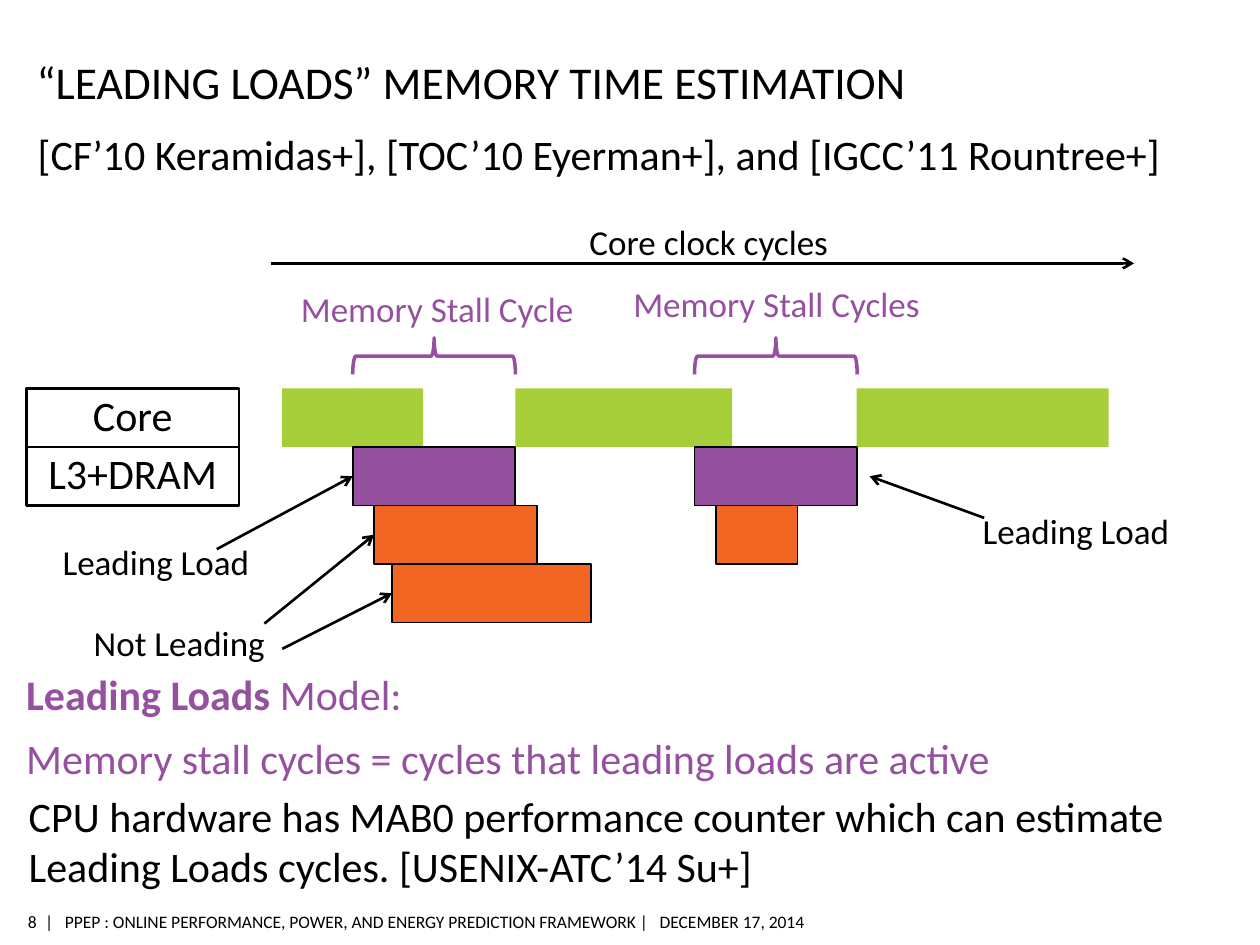
from lxml import etree
from pptx import Presentation
from pptx.dml.color import RGBColor
from pptx.enum.shapes import MSO_CONNECTOR, MSO_SHAPE
from pptx.enum.text import MSO_ANCHOR as ANCHOR, PP_ALIGN as ALIGN
from pptx.oxml.ns import qn
from pptx.util import Cm, Pt

COLORS = {"black": "000000", "white": "FFFFFF", "green": "A6CE39",
          "orange": "F26522", "purple": "9650A0"}
ROW_TOP, ROW_HEIGHT = 7.83, 1.18
STALL_WIDTH = 3.28
BRACE_WIDTH, BRACE_TOP = 0.74, 5.54


def write(box, paragraphs, size, color="black", align=ALIGN.LEFT,
          anchor=ANCHOR.TOP, side=0, top=0.13, bottom=0.13, spacing=1.0, wrap=True):
    frame = box.text_frame
    settings = {"word_wrap": wrap, "vertical_anchor": anchor,
                "margin_left": Cm(side), "margin_right": Cm(side),
                "margin_top": Cm(top), "margin_bottom": Cm(bottom)}
    for name, value in settings.items():
        setattr(frame, name, value)
    for index, spans in enumerate(paragraphs):
        para = frame.paragraphs[0] if index == 0 else frame.add_paragraph()
        properties = para._p.get_or_add_pPr()
        properties.set("marL", "0")
        properties.set("indent", "0")
        etree.SubElement(properties, qn("a:buNone"))
        formats = {"alignment": align, "line_spacing": spacing,
                   "space_before": Pt(8 if index else 0)}
        for name, value in formats.items():
            setattr(para, name, value)
        for text, bold in spans:
            span = para.add_run()
            span.text = text
            for name, value in {"name": "Calibri", "size": Pt(size), "bold": bold}.items():
                setattr(span.font, name, value)
            span.font.color.rgb = RGBColor.from_string(COLORS[color])


def add_block(left, row, width, fill, line_width):
    block = page.shapes.add_shape(MSO_SHAPE.RECTANGLE, Cm(left),
                                  Cm(ROW_TOP + row * ROW_HEIGHT), Cm(width), Cm(ROW_HEIGHT))
    block.shadow.inherit = False
    block.fill.solid()
    block.fill.fore_color.rgb = RGBColor.from_string(COLORS[fill])
    if line_width:
        block.line.color.rgb = RGBColor.from_string(COLORS["black"])
        block.line.width = Pt(line_width)
    else:
        block.line.fill.background()
    return block


deck = Presentation()
deck.slide_width, deck.slide_height = Cm(25.4), Cm(19.05)
page = deck.slides.add_slide(deck.slide_layouts[1])

title, citations = page.shapes.title, page.placeholders[1]
for box, place in ((title, (0.74, 0.86, 21.34, 1.32)), (citations, (0.76, 2.46, 23.88, 1.57))):
    box.left, box.top, box.width, box.height = map(Cm, place)
write(title, [[("“LEADING LOADS” MEMORY TIME ESTIMATION", False)]], 26,
      anchor=ANCHOR.BOTTOM, bottom=0)
write(citations, [[("[CF’10 Keramidas+], [TOC’10 Eyerman+], and [IGCC’11 Rountree+]", False)]], 24)

for row, text in enumerate(("Core", "L3+DRAM")):
    block = add_block(0.53, row, 4.29, "white", 1.5)
    write(block, [[(text, False)]], 24, align=ALIGN.CENTER, anchor=ANCHOR.MIDDLE,
          side=0.25, spacing=0.9)

for left, width in ((5.69, 1.45), (7.11, 1.42), (10.39, 4.37), (17.27, 5.08)):
    add_block(left, 0, width, "green", 0)
other_loads = [add_block(left, row, width, "orange", 1) for left, row, width in
               ((7.54, 2, STALL_WIDTH), (7.9, 3, 4.01), (14.43, 2, 1.65))]

leading_loads = []
for left in (7.11, 14):
    leading_loads.append(add_block(left, 1, STALL_WIDTH, "purple", 1))
    brace = page.shapes.add_shape(MSO_SHAPE.LEFT_BRACE,
                                  Cm(left + (STALL_WIDTH - BRACE_WIDTH) / 2),
                                  Cm(BRACE_TOP), Cm(BRACE_WIDTH), Cm(STALL_WIDTH))
    brace.rotation = 90
    brace.shadow.inherit = False
    brace.fill.background()
    brace.line.color.rgb = RGBColor.from_string(COLORS["purple"])
    brace.line.width = Pt(2)

arrows = [
    (4.37, 11.07, 7.11, 9.6, leading_loads[0]),
    (5.33, 12.57, 7.54, 10.8, other_loads[0]),
    (5.69, 13.08, 7.9, 11.99, other_loads[1]),
    (19.84, 10.44, 17.53, 9.6, None),
    (5.46, 5.31, 22.86, 5.31, None),
]
for *ends, target in arrows:
    arrow = page.shapes.add_connector(MSO_CONNECTOR.STRAIGHT, *map(Cm, ends))
    if target is not None:
        arrow.end_connect(target, 1)
    arrow.line.color.rgb = RGBColor.from_string(COLORS["black"])
    arrow.line.width = Pt(1.5)
    etree.SubElement(arrow.line._get_or_add_ln(), qn("a:tailEnd"), type="arrow")
    etree.SubElement(arrow._element.spPr, qn("a:effectLst"))

labels = [
    ("Leading Load", 0.2, 10.87, 5.89, "black"),
    ("Not Leading", 1.19, 12.5, 4.85, "black"),
    ("Leading Load", 19.43, 10.24, 4.52, "black"),
    ("Memory Stall Cycle", 5.69, 5.77, 6.25, "purple"),
    ("Memory Stall Cycles", 11.91, 5.66, 7.49, "purple"),
    ("Core clock cycles", 5.59, 4.42, 17.4, "black"),
]
for text, left, top, width, color in labels:
    box = page.shapes.add_textbox(Cm(left), Cm(top), Cm(width), Cm(1.02))
    write(box, [[(text, False)]], 20, color, ALIGN.CENTER, ANCHOR.MIDDLE,
          side=0.25, spacing=0.9)

model = page.shapes.add_textbox(Cm(0.53), Cm(13.34), Cm(24.1), Cm(2.49))
write(model, [[("Leading Loads ", True), ("Model:", False)],
              [("Memory stall cycles = cycles that leading loads are active", False)]],
      24, "purple")
counter = page.shapes.add_textbox(Cm(0.58), Cm(15.8), Cm(23.88), Cm(2.31))
write(counter, [[("CPU hardware has MAB0 performance counter which can estimate "
                  "Leading Loads cycles. [USENIX-ATC’14 Su+]", False)]], 24)

footer = [
    ("8", 0.33, 0.41, ALIGN.RIGHT),
    ("|   PPEP : ONLINE PERFORMANCE, POWER, AND ENERGY PREDICTION FRAMEWORK |"
     "   DECEMBER 17, 2014", 0.91, 15.52, ALIGN.LEFT),
]
for text, left, width, align in footer:
    box = page.shapes.add_textbox(Cm(left), Cm(18.24), Cm(width), Cm(0.66))
    write(box, [[(text, False)]], 10, align=align, anchor=ANCHOR.MIDDLE,
          top=0.1, bottom=0.1, wrap=False)

deck.save("out.pptx")
